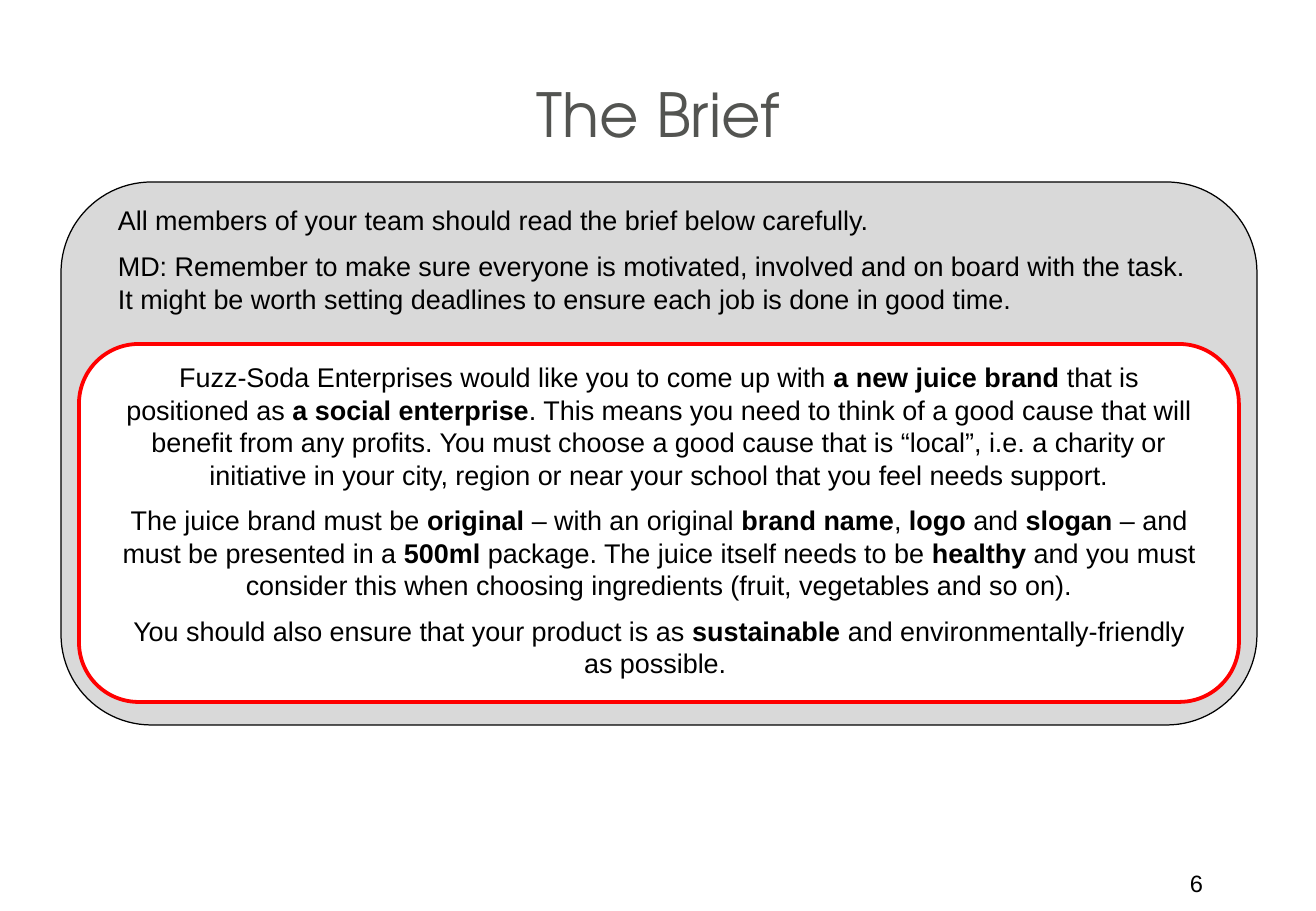
from pptx import Presentation
from pptx.dml.color import RGBColor
from pptx.enum.shapes import MSO_SHAPE
from pptx.enum.text import MSO_ANCHOR, PP_ALIGN
from pptx.util import Pt

LEFT, CENTER, RIGHT = PP_ALIGN.LEFT, PP_ALIGN.CENTER, PP_ALIGN.RIGHT
PANEL_SHAPE = MSO_SHAPE.FLOWCHART_ALTERNATE_PROCESS
BRIEF_SHAPE = MSO_SHAPE.ROUNDED_RECTANGLE
TOP = MSO_ANCHOR.TOP

BLACK = RGBColor(0x00, 0x00, 0x00)
WHITE = RGBColor(0xFF, 0xFF, 0xFF)
RED = RGBColor(0xFF, 0x00, 0x00)
PANEL_GREY = RGBColor(0xD9, 0xD9, 0xD9)
TITLE_GREY = RGBColor(0x53, 0x54, 0x51)

# Text between ** marks is bold.
TITLE = ["The Brief"]
INSTRUCTIONS = [
    "All members of your team should read the brief below carefully.",
    "MD: Remember to make sure everyone is motivated, involved and on board with "
    "the task. It might be worth setting deadlines to ensure each job is done in "
    "good time.",
]
BRIEF = [
    "Fuzz-Soda Enterprises would like you to come up with **a new juice brand **that "
    "is positioned as **a social enterprise**. This means you need to think of a good "
    "cause that will benefit from any profits. You must choose a good cause that is "
    "“local”, i.e. a charity or initiative in your city, region or near your school "
    "that you feel needs support.",
    "The juice brand must be **original** – with an original **brand name**, **logo** "
    "and **slogan **– and must be presented in a **500ml **package. The juice itself "
    "needs to be **healthy** and you must consider this when choosing ingredients "
    "(fruit, vegetables and so on).",
    "You should also ensure that your product is as **sustainable **and "
    "environmentally-friendly as possible. ",
]
PAGE_NUMBER = ["6"]

PX = 7526  # EMU per px
SLIDE_WIDTH, SLIDE_HEIGHT = 1316, 911
TEXT_LEFT, TEXT_WIDTH = 106, 1106


def emu(*lengths):
    return [length * PX for length in lengths]


def add_panel(slide, preset, box, fill, line, line_width):
    panel = slide.shapes.add_shape(preset, *emu(*box))
    panel.shadow.inherit = False
    panel.fill.solid()
    panel.fill.fore_color.rgb = fill
    panel.line.color.rgb = line
    panel.line.width = Pt(line_width)


def add_text(slide, paragraphs, box, size=16, font="Arial", color=BLACK,
             align=LEFT, gap=8):
    frame = slide.shapes.add_textbox(*emu(*box)).text_frame
    frame.word_wrap = True
    frame.vertical_anchor = TOP
    for index, text in enumerate(paragraphs):
        paragraph = frame.add_paragraph() if index else frame.paragraphs[0]
        paragraph.alignment = align
        if index:
            paragraph.space_before = Pt(gap)
        for part, wording in enumerate(text.split("**")):
            run = paragraph.add_run()
            run.text = wording
            run.font.size = Pt(size)
            run.font.name = font
            run.font.color.rgb = color
            run.font.bold = part % 2 == 1


def main():
    deck = Presentation()
    deck.slide_width, deck.slide_height = emu(SLIDE_WIDTH, SLIDE_HEIGHT)
    slide = deck.slides.add_slide(deck.slide_layouts[6])

    add_panel(slide, PANEL_SHAPE, (61, 182, 1196, 543), PANEL_GREY, BLACK, 0.75)
    add_text(slide, INSTRUCTIONS, (TEXT_LEFT, 198, TEXT_WIDTH, 126))
    add_panel(slide, BRIEF_SHAPE, (79, 344, 1160, 358), WHITE, RED, 2.25)
    add_text(slide, BRIEF, (TEXT_LEFT, 355, TEXT_WIDTH, 339), align=CENTER)
    add_text(slide, PAGE_NUMBER, (908, 863, 307, 48), size=14, align=RIGHT)
    add_text(slide, TITLE, (66, 71, 1185, 166), size=36, font="TeX Gyre Adventor",
             color=TITLE_GREY, align=CENTER)

    deck.save("out.pptx")


if __name__ == "__main__":
    main()
